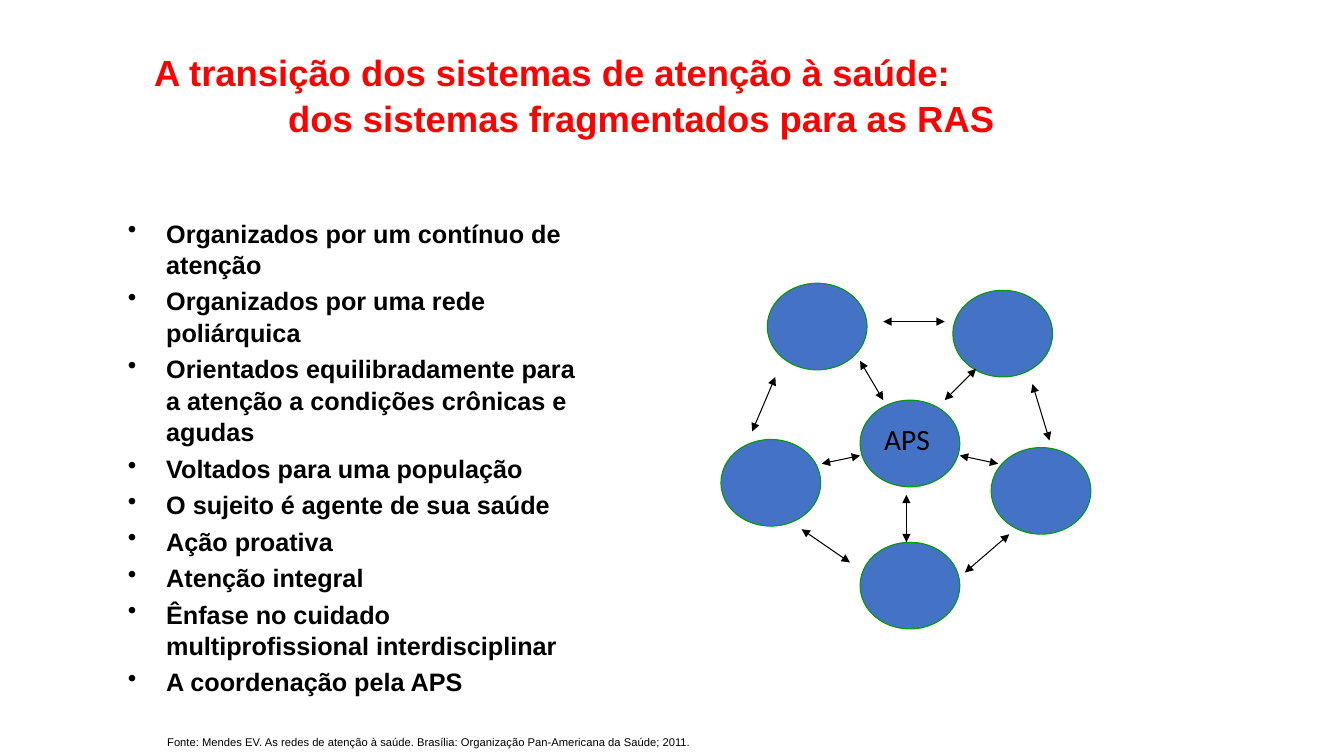
from pptx import Presentation
from pptx.dml.color import RGBColor
from pptx.enum.shapes import MSO_CONNECTOR, MSO_SHAPE
from pptx.oxml.ns import qn
from pptx.util import Inches, Pt
from lxml import etree

OVAL = MSO_SHAPE.OVAL
STRAIGHT = MSO_CONNECTOR.STRAIGHT
RED = RGBColor(0xFF, 0x00, 0x00)
BLACK = RGBColor(0x00, 0x00, 0x00)
BLUE = RGBColor(0x44, 0x72, 0xC4)
GREEN = RGBColor(0x00, 0x99, 0x00)

prs = Presentation()
prs.slide_width, prs.slide_height = Inches(13.33), Inches(7.5)
s = prs.slides.add_slide(prs.slide_layouts[6])


def add_text(left, top, width, height, lines, size, color, font="Arial", bold=False):
    tf = s.shapes.add_textbox(Inches(left), Inches(top), Inches(width), Inches(height)).text_frame
    tf.word_wrap = True
    for i, line in enumerate(lines):
        p = tf.paragraphs[0] if i == 0 else tf.add_paragraph()
        p.text = line
        p.font.size, p.font.name, p.font.bold = Pt(size), font, bold
        p.font.color.rgb = color
    return tf


def set_indent(p, left, first=0):
    pPr = p._p.get_or_add_pPr()
    pPr.set("marL", str(Inches(left)))
    pPr.set("indent", str(Inches(first)))
    return pPr


# Title, second line stepped to the right
tf = add_text(1.4, 0.43, 9.45, 1.25,
              ["A transição dos sistemas de atenção à saúde:",
               "dos sistemas fragmentados para as RAS"], 26, RED, bold=True)
for p, left in zip(tf.paragraphs, (0.03, 1.36)):
    set_indent(p, left)
    p.line_spacing = 1.05

# Features of the care networks
features = [
    "Organizados por um contínuo de atenção",
    "Organizados por uma rede poliárquica",
    "Orientados equilibradamente para a atenção a condições crônicas e agudas",
    "Voltados para uma população",
    "O sujeito é agente de sua saúde",
    "Ação proativa",
    "Atenção integral",
    "Ênfase no cuidado multiprofissional interdisciplinar",
    "A coordenação pela APS",
]
tf = add_text(1.17, 2.1, 4.68, 4.95, features, 18, BLACK, bold=True)
for i, p in enumerate(tf.paragraphs):
    pPr = set_indent(p, 0.38, -0.38)
    bullet = etree.Element(qn("a:buChar"), char="•")
    pPr.insert_element_before(bullet, "a:tabLst", "a:defRPr", "a:extLst")
    p.line_spacing = 1.04
    if i:
        p.space_before = Pt(3.6)

# Source
add_text(1.56, 7.25, 8.66, 0.25,
         ["Fonte: Mendes EV. As redes de atenção à saúde. Brasília: "
          "Organização Pan-Americana da Saúde; 2011."], 8, BLACK)

# Network nodes, the second one being the centre
nodes = [(9.45, 2.88), (8.53, 3.97), (7.61, 2.81),
         (8.53, 5.38), (7.15, 4.36), (9.83, 4.44)]
for left, top in nodes:
    sp = s.shapes.add_shape(OVAL, Inches(left), Inches(top), Inches(0.99), Inches(0.86))
    sp.shadow.inherit = False
    sp.fill.solid()
    sp.fill.fore_color.rgb = BLUE
    sp.line.color.rgb = GREEN
    sp.line.width = Pt(0.75)
add_text(8.67, 4.13, 0.78, 0.45, ["APS"], 21, BLACK, font="Calibri")

# Two-way arrows: outer ring, then spokes to the centre
arrows = [
    (7.69, 3.74, 7.46, 4.28), (10.24, 3.81, 10.41, 4.37),
    (10.01, 5.3, 9.57, 5.68), (7.95, 5.25, 8.43, 5.58),
    (8.76, 3.19, 9.37, 3.19),
    (8.99, 4.91, 8.99, 5.38), (8.15, 4.6, 8.53, 4.52),
    (8.53, 3.58, 8.76, 3.97), (9.68, 3.66, 9.37, 3.97),
    (9.52, 4.52, 9.9, 4.6),
]
for ends in arrows:
    arrow = s.shapes.add_connector(STRAIGHT, *[Inches(v) for v in ends])
    arrow.line.color.rgb = BLACK
    arrow.line.width = Pt(0.75)
    ln = arrow.line._get_or_add_ln()
    for tag in ("a:headEnd", "a:tailEnd"):
        etree.SubElement(ln, qn(tag), type="triangle")
    etree.SubElement(arrow._element.spPr, qn("a:effectLst"))

prs.save("out.pptx")
